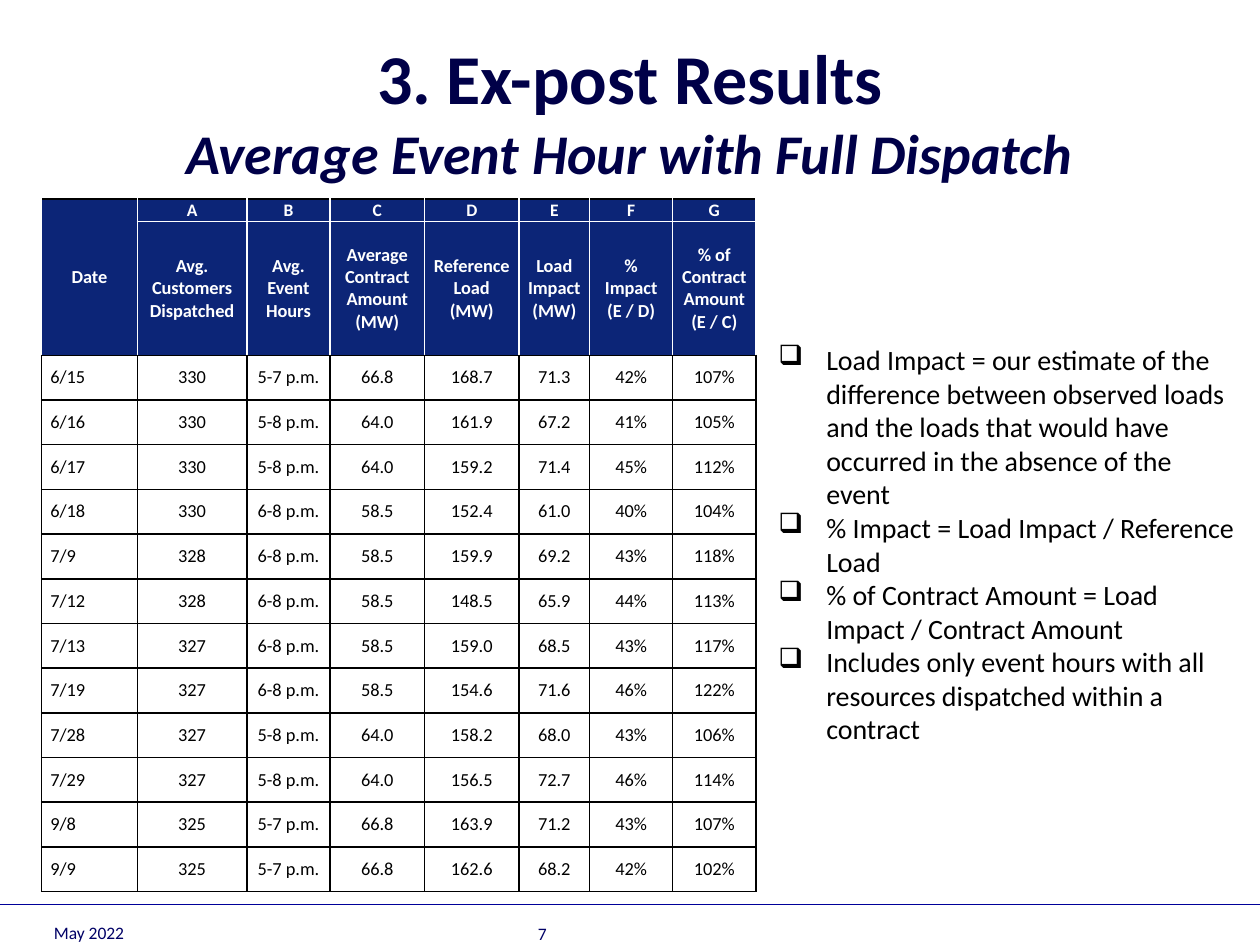
from lxml import etree
from pptx import Presentation
from pptx.dml.color import RGBColor
from pptx.enum.shapes import MSO_CONNECTOR
from pptx.enum.text import MSO_ANCHOR, MSO_AUTO_SIZE, PP_ALIGN
from pptx.oxml.ns import qn
from pptx.util import Inches, Pt

STRAIGHT = MSO_CONNECTOR.STRAIGHT
MIDDLE, BOTTOM = MSO_ANCHOR.MIDDLE, MSO_ANCHOR.BOTTOM
LEFT, CENTER = PP_ALIGN.LEFT, PP_ALIGN.CENTER
NO_AUTOFIT = MSO_AUTO_SIZE.NONE

FONT = "Calibri"
TITLE_COLOR = RGBColor(0x00, 0x00, 0x48)
FOOTER_COLOR = RGBColor(0x00, 0x00, 0x66)
RULE_COLOR = RGBColor(0x00, 0x00, 0x99)
HEADER_FILL = RGBColor(0x0C, 0x25, 0x77)
WHITE = RGBColor(0xFF, 0xFF, 0xFF)
BLACK = RGBColor(0x00, 0x00, 0x00)

COLUMN_WIDTHS = [0.76, 0.87, 0.66, 0.75, 0.75, 0.56, 0.66, 0.66]
LETTER_ROW, HEADING_ROW, TABLE_HEIGHT = 0.18, 1.06, 5.5
LETTERS = "ABCDEFG"
# Each heading is a list of paragraphs; "\n" is a line break within one
HEADINGS = [
    ["Avg. Customers Dispatched"],
    ["Avg. Event Hours"],
    ["Average Contract Amount\n(MW)"],
    ["Reference Load\n(MW)"],
    ["Load Impact\n(MW)"],
    ["% Impact", "(E / D)"],
    ["% of Contract Amount", "(E / C)"],
]
RESULTS = [
    ("6/15", "330", "5-7 p.m.", "66.8", "168.7", "71.3", "42%", "107%"),
    ("6/16", "330", "5-8 p.m.", "64.0", "161.9", "67.2", "41%", "105%"),
    ("6/17", "330", "5-8 p.m.", "64.0", "159.2", "71.4", "45%", "112%"),
    ("6/18", "330", "6-8 p.m.", "58.5", "152.4", "61.0", "40%", "104%"),
    ("7/9", "328", "6-8 p.m.", "58.5", "159.9", "69.2", "43%", "118%"),
    ("7/12", "328", "6-8 p.m.", "58.5", "148.5", "65.9", "44%", "113%"),
    ("7/13", "327", "6-8 p.m.", "58.5", "159.0", "68.5", "43%", "117%"),
    ("7/19", "327", "6-8 p.m.", "58.5", "154.6", "71.6", "46%", "122%"),
    ("7/28", "327", "5-8 p.m.", "64.0", "158.2", "68.0", "43%", "106%"),
    ("7/29", "327", "5-8 p.m.", "64.0", "156.5", "72.7", "46%", "114%"),
    ("9/8", "325", "5-7 p.m.", "66.8", "163.9", "71.2", "43%", "107%"),
    ("9/9", "325", "5-7 p.m.", "66.8", "162.6", "68.2", "42%", "102%"),
]
NOTES = [
    "Load Impact = our estimate of the difference between observed loads "
    "and the loads that would have occurred in the absence of the event",
    "% Impact = Load Impact / Reference Load",
    "% of Contract Amount = Load Impact / Contract Amount",
    "Includes only event hours with all resources dispatched within a contract",
]


def add_run(paragraph, text, size, color, bold=False, italic=False):
    run = paragraph.add_run()
    run.text = text
    font = run.font
    font.name, font.size, font.bold, font.italic = FONT, Pt(size), bold, italic
    font.color.rgb = color


def add_paragraph(text_frame, index):
    return text_frame.paragraphs[0] if index == 0 else text_frame.add_paragraph()


def add_title(slide):
    title = slide.shapes.title
    title.left, title.top = Inches(0.5), Inches(0.25)
    title.width, title.height = Inches(9), Inches(1.25)
    text_frame = title.text_frame
    text_frame.auto_size = NO_AUTOFIT
    text_frame.vertical_anchor = MIDDLE
    paragraph = text_frame.paragraphs[0]
    paragraph.alignment = CENTER
    add_run(paragraph, "3. Ex-post Results", 40, TITLE_COLOR, bold=True)
    paragraph.add_line_break()
    add_run(paragraph, "Average Event Hour with Full Dispatch", 32, TITLE_COLOR,
            bold=True, italic=True)


def add_text_box(slide, left, top, width, height):
    box = slide.shapes.add_textbox(Inches(left), Inches(top), Inches(width), Inches(height))
    box.text_frame.word_wrap = True
    return box.text_frame


def add_footer_text(slide, left, top, text):
    text_frame = add_text_box(slide, left, top, 2.33, 0.52)
    text_frame.vertical_anchor = BOTTOM
    add_run(text_frame.paragraphs[0], text, 10, FOOTER_COLOR)


def add_footer_rule(slide):
    rule = slide.shapes.add_connector(STRAIGHT, 0, Inches(7.18), Inches(10), Inches(7.18))
    rule.line.color.rgb = RULE_COLOR
    rule.line.width = Pt(0.75)
    etree.SubElement(rule._element.spPr, qn("a:effectLst"))


def set_borders(cell, left, right, top, bottom):
    properties = cell._tc.get_or_add_tcPr()
    sides = {"a:lnL": left, "a:lnR": right, "a:lnT": top, "a:lnB": bottom}
    # Borders come before the fill in the cell properties
    for position, (tag, color) in enumerate(sides.items()):
        line = etree.Element(qn(tag), w=str(Pt(1)))
        fill = etree.SubElement(line, qn("a:solidFill"))
        etree.SubElement(fill, qn("a:srgbClr"), val=str(color))
        properties.insert(position, line)


def fill_cell(cell, paragraphs, size=10.5, header=False, alignment=CENTER):
    cell.margin_left = cell.margin_right = Inches(0.07)
    cell.margin_top = cell.margin_bottom = 0
    cell.vertical_anchor = MIDDLE
    if header:
        cell.fill.solid()
        cell.fill.fore_color.rgb = HEADER_FILL
    else:
        cell.fill.background()
    for index, text in enumerate(paragraphs):
        paragraph = add_paragraph(cell.text_frame, index)
        paragraph.alignment = alignment
        for line_index, line in enumerate(text.split("\n")):
            if line_index:
                paragraph.add_line_break()
            add_run(paragraph, line, size, WHITE if header else BLACK, bold=header)


def add_results_table(slide):
    row_count = len(RESULTS) + 2
    table = slide.shapes.add_table(
        row_count, len(COLUMN_WIDTHS), Inches(0.33), Inches(1.58),
        Inches(sum(COLUMN_WIDTHS)), Inches(TABLE_HEIGHT)).table
    table.first_row = table.horz_banding = False
    for column, width in zip(table.columns, COLUMN_WIDTHS):
        column.width = Inches(width)
    body_row = (TABLE_HEIGHT - LETTER_ROW - HEADING_ROW) / len(RESULTS)
    heights = [LETTER_ROW, HEADING_ROW] + [body_row] * len(RESULTS)
    for row, height in zip(table.rows, heights):
        row.height = Inches(height)

    # Header: the date cell spans both rows
    table.cell(0, 0).merge(table.cell(1, 0))
    fill_cell(table.cell(0, 0), ["Date"], header=True)
    set_borders(table.cell(0, 0), WHITE, WHITE, BLACK, BLACK)
    set_borders(table.cell(1, 0), WHITE, WHITE, BLACK, BLACK)
    for column, (letter, heading) in enumerate(zip(LETTERS, HEADINGS), start=1):
        letter_cell, heading_cell = table.cell(0, column), table.cell(1, column)
        fill_cell(letter_cell, [letter], size=10, header=True)
        set_borders(letter_cell, WHITE, WHITE, BLACK, WHITE)
        fill_cell(heading_cell, heading, header=True)
        set_borders(heading_cell, WHITE, WHITE, WHITE, BLACK)

    # Body: one row for each event date
    for row, values in enumerate(RESULTS, start=2):
        for column, value in enumerate(values):
            cell = table.cell(row, column)
            fill_cell(cell, [value], alignment=CENTER if column else LEFT)
            set_borders(cell, BLACK, BLACK, BLACK, BLACK)


def add_notes_list(slide):
    text_frame = add_text_box(slide, 6.08, 2.67, 3.83, 3.33)
    for index, note in enumerate(NOTES):
        paragraph = add_paragraph(text_frame, index)
        properties = paragraph._p.get_or_add_pPr()
        properties.set("marL", str(Inches(0.38)))
        properties.set("indent", str(-Inches(0.38)))
        etree.SubElement(properties, qn("a:buChar"), char="❑")
        add_run(paragraph, note, 16, BLACK)


def main():
    presentation = Presentation()
    presentation.slide_width, presentation.slide_height = Inches(10), Inches(7.5)
    slide = presentation.slides.add_slide(presentation.slide_layouts[5])
    add_footer_rule(slide)
    add_footer_text(slide, 0.33, 7.01, "May 2022")
    add_footer_text(slide, 4.17, 7.02, "7")
    add_title(slide)
    add_results_table(slide)
    add_notes_list(slide)
    presentation.save("out.pptx")


if __name__ == "__main__":
    main()
